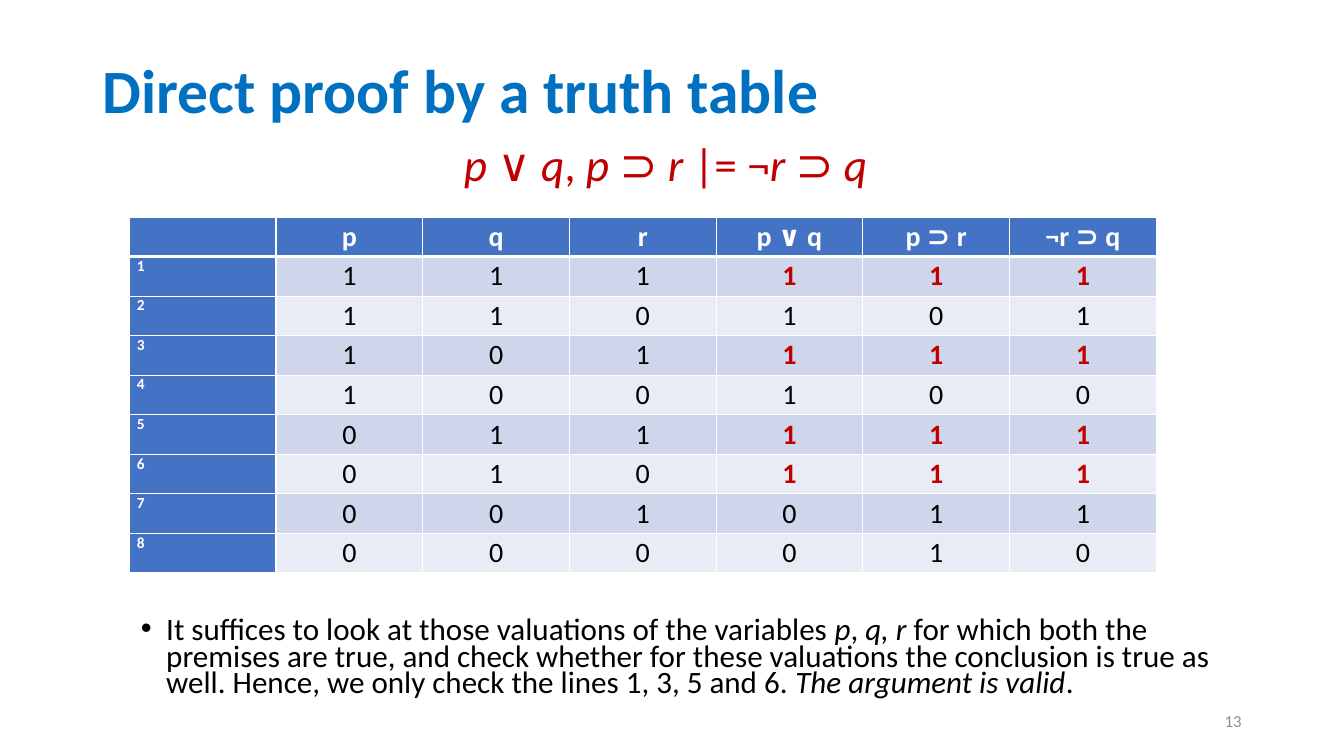
import itertools

import pptx
import pptx.dml.color
import pptx.enum.text
import pptx.oxml
import pptx.oxml.ns
import pptx.util
from lxml import etree

Cm = pptx.util.Cm
Pt = pptx.util.Pt
RGBColor = pptx.dml.color.RGBColor
Align = pptx.enum.text.PP_ALIGN
Anchor = pptx.enum.text.MSO_ANCHOR

TITLE_BLUE = RGBColor(0x00, 0x70, 0xC0)
HEADER_BLUE = RGBColor(0x44, 0x72, 0xC4)
BAND_DARK = RGBColor(0xCF, 0xD5, 0xEA)
BAND_LIGHT = RGBColor(0xE9, 0xEB, 0xF5)
RED = RGBColor(0xC0, 0x00, 0x00)
GREY = RGBColor(0x8C, 0x8C, 0x8C)
BLACK = RGBColor(0x00, 0x00, 0x00)
WHITE = RGBColor(0xFF, 0xFF, 0xFF)

FONT = "Calibri"
HEADINGS = ["", "p", "q", "r", "p ∨ q", "p ⊃ r", "¬r ⊃ q"]
FORMULA = "*p* ∨ *q*, *p* ⊃ *r* |= ¬*r* ⊃ *q*"
EXPLANATION = (
    "It suffices to look at those valuations of the variables *p*, *q, r* for which "
    "both the premises are true, and check whether for these valuations the conclusion "
    "is true as well. Hence, we only check the lines 1, 3, 5 and 6. "
    "*The argument is valid*."
)


def write_text(frame, text, size=20, color=BLACK, bold=False, align=Align.LEFT,
               spacing=None, anchor=Anchor.TOP):
    """Fill a text frame; parts between asterisks are set in italics."""
    frame.word_wrap = True
    frame.vertical_anchor = anchor
    para = frame.paragraphs[0]
    para.alignment = align
    para.line_spacing = spacing
    for index, part in enumerate(text.split("*")):
        if part:
            span = para.add_run()
            span.text = part
            span.font.name = FONT
            span.font.size = Pt(size)
            span.font.bold = bold
            span.font.italic = index % 2 == 1
            span.font.color.rgb = color
    return para


class ProofSlide:
    def __init__(self, deck):
        self.page = deck.slides.add_slide(deck.slide_layouts[5])

    def title(self, text, left, top, width, height):
        box = self.page.shapes.title
        box.left, box.top, box.width, box.height = map(Cm, (left, top, width, height))
        write_text(box.text_frame, text, size=44, color=TITLE_BLUE, bold=True,
                   spacing=0.9, anchor=Anchor.MIDDLE)

    def text(self, text, left, top, width, height, **style):
        box = self.page.shapes.add_textbox(*map(Cm, (left, top, width, height)))
        return write_text(box.text_frame, text, **style)

    def bullet(self, text, left, top, width, height, **style):
        para = self.text(text, left, top, width, height, **style)
        properties = para._p.get_or_add_pPr()
        properties.set("marL", str(Cm(0.64)))
        properties.set("indent", str(-Cm(0.64)))
        mark_font = etree.SubElement(properties, pptx.oxml.ns.qn("a:buFont"))
        mark_font.set("typeface", "Arial")
        mark = etree.SubElement(properties, pptx.oxml.ns.qn("a:buChar"))
        mark.set("char", "•")

    def table(self, rows, columns, left, top, width, height):
        frame = self.page.shapes.add_table(rows, columns, *map(Cm, (left, top, width, height)))
        return frame.table

    def cell(self, cell, text, fill, bottom=1, **style):
        cell.margin_left = cell.margin_right = Cm(0.19)
        cell.margin_top = cell.margin_bottom = 0
        anchor = style.pop("anchor", Anchor.MIDDLE)
        write_text(cell.text_frame, text, **style)
        cell.vertical_anchor = anchor
        # Borders come before the fill in the cell properties
        properties = cell._tc.get_or_add_tcPr()
        for side, weight in zip("LRTB", (1, 1, 1, bottom)):
            line = etree.SubElement(properties, pptx.oxml.ns.qn(f"a:ln{side}"))
            line.set("w", str(Pt(weight)))
            paint = etree.SubElement(line, pptx.oxml.ns.qn("a:solidFill"))
            etree.SubElement(paint, pptx.oxml.ns.qn("a:srgbClr")).set("val", str(WHITE))
        cell.fill.solid()
        cell.fill.fore_color.rgb = fill

    def truth_table(self, left, top, width, height):
        table = self.table(9, len(HEADINGS), left, top, width, height)
        for column, heading in enumerate(HEADINGS):
            self.cell(table.cell(0, column), heading, HEADER_BLUE, bottom=3,
                      color=WHITE, bold=True, align=Align.CENTER)
        for row, (p, q, r) in enumerate(itertools.product((1, 0), repeat=3), start=1):
            premises = [int(p or q), int(not p or r)]
            values = [p, q, r, *premises, int(r or q)]
            band = BAND_DARK if row % 2 else BAND_LIGHT
            self.cell(table.cell(row, 0), str(row), HEADER_BLUE, size=11, color=WHITE,
                      bold=True, align=Align.JUSTIFY, anchor=Anchor.TOP)
            for column, value in enumerate(values, start=1):
                checked = all(premises) and column > 3
                self.cell(table.cell(row, column), str(value), band, bold=checked,
                          color=RED if checked else BLACK, align=Align.CENTER)


def main():
    deck = pptx.Presentation()
    deck.slide_width, deck.slide_height = Cm(33.87), Cm(19.05)
    slide = ProofSlide(deck)

    # Title and argument
    slide.title("Direct proof by a truth table", 2.33, 1.01, 29.21, 2.67)
    slide.text(FORMULA, 2.03, 3.68, 29.49, 1.4, size=32.4, color=RED,
               align=Align.CENTER, spacing=0.7)

    # Truth table
    slide.truth_table(3.26, 5.47, 25.88, 8.97)

    # Explanation and page number
    slide.bullet(EXPLANATION, 3.3, 15.5, 28.22, 2.3, size=22.2, spacing=0.7)
    slide.text("13", 23.92, 17.66, 7.62, 1.01, size=12, color=GREY,
               align=Align.RIGHT, anchor=Anchor.MIDDLE)

    deck.save("out.pptx")


if __name__ == "__main__":
    main()
